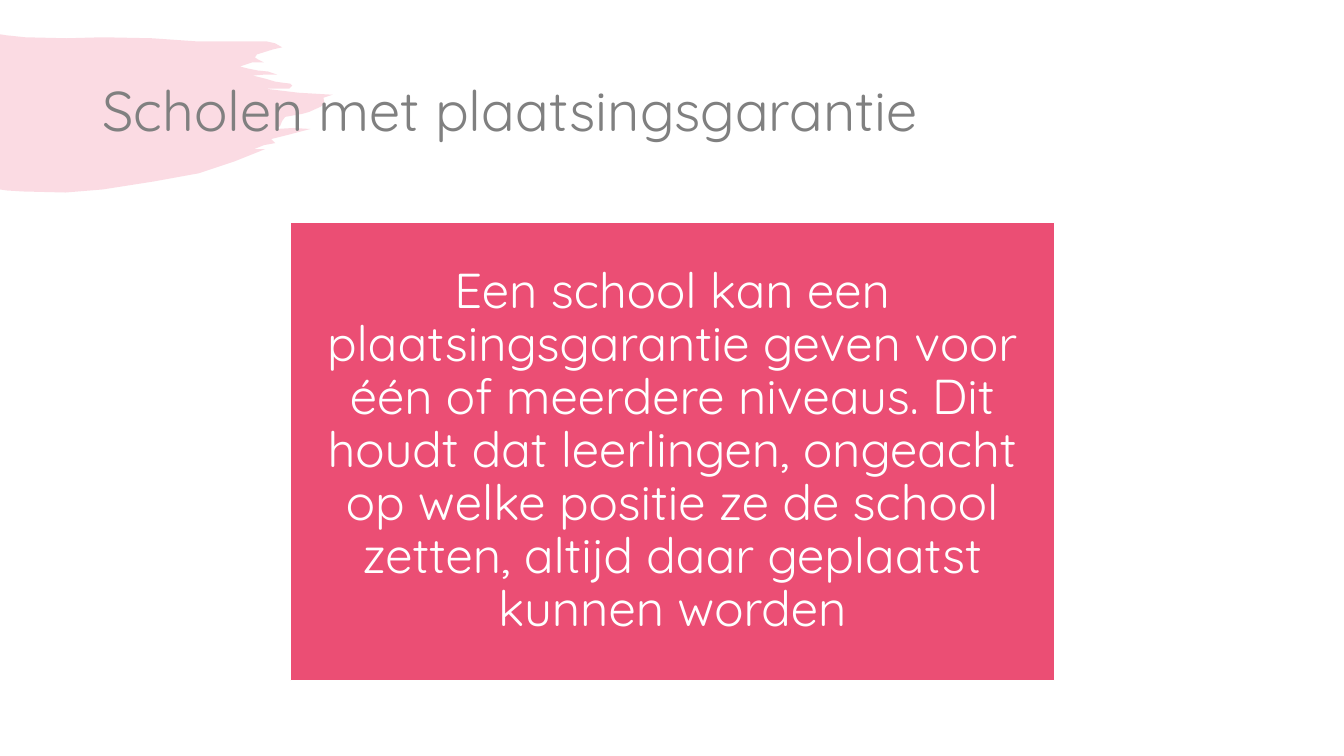
from pptx import Presentation
from pptx.dml.color import RGBColor
from pptx.enum.shapes import MSO_SHAPE
from pptx.enum.text import MSO_ANCHOR, MSO_AUTO_SIZE, PP_ALIGN
from pptx.util import Cm, Pt
from lxml import etree

PINK, GREY, WHITE = "EB4E74", "808080", "FFFFFF"


def paint(color_holder, value):
    color_holder.rgb = RGBColor.from_string(value)


def write(frame, text, size, color, align):
    frame.word_wrap = True
    frame.auto_size = MSO_AUTO_SIZE.NONE
    frame.vertical_anchor = MSO_ANCHOR.MIDDLE
    para = frame.paragraphs[0]
    para.alignment = align
    para.line_spacing = 0.9
    span = para.add_run()
    span.text = text
    span.font.name = "Quicksand"
    span.font.size = Pt(size)
    paint(span.font.color, color)


deck = Presentation()
deck.slide_width, deck.slide_height = Cm(33.87), Cm(19.05)
page = deck.slides.add_slide(deck.slide_layouts[5])
title = page.shapes.title

# Brush stroke, outlined in steps of 0.0254 cm
outline = [
    (0, 34), (6, 35), (25, 37), (66, 38), (102, 37), (151, 38), (194, 41),
    (248, 41), (264, 41), (273, 43), (280, 47), (271, 49), (255, 54),
    (253, 57), (256, 59), (262, 62), (250, 62), (238, 66), (246, 68),
    (256, 70), (266, 71), (275, 74), (263, 74), (251, 75), (263, 78),
    (273, 81), (280, 82), (288, 83), (290, 85), (287, 88), (284, 88),
    (263, 88), (296, 92), (330, 94), (321, 97), (322, 103), (318, 106),
    (307, 111), (300, 113), (283, 116), (280, 120), (278, 125), (274, 128),
    (291, 127), (308, 128), (289, 133), (269, 138), (273, 142), (262, 144),
    (252, 148), (263, 148), (233, 160), (197, 172), (153, 180), (102, 188),
    (65, 191), (23, 190), (7, 189), (0, 188),
]
builder = page.shapes.build_freeform(*outline[0], scale=Cm(0.0254))
builder.add_line_segments(outline[1:], close=True)
brush = builder.convert_to_shape()
brush.shadow.inherit = False
brush.fill.solid()
paint(brush.fill.fore_color, PINK)
brush.line.fill.background()
namespace = "{http://schemas.openxmlformats.org/drawingml/2006/main}"
brush_color = brush.element.spPr.find(f"{namespace}solidFill/{namespace}srgbClr")
etree.SubElement(brush_color, f"{namespace}alpha", val="20000")

# Title, brought in front of the brush stroke
brush.element.addnext(title.element)
title.left, title.top = Cm(2.33), Cm(1.01)
title.width, title.height = Cm(29.21), Cm(3.68)
write(title.text_frame, "Scholen met plaatsingsgarantie", 40, GREY, PP_ALIGN.LEFT)

# Explanation box
box = page.shapes.add_shape(
    MSO_SHAPE.RECTANGLE, Cm(7.32), Cm(5.6), Cm(19.25), Cm(11.55))
box.shadow.inherit = False
box.fill.solid()
paint(box.fill.fore_color, PINK)
paint(box.line.color, WHITE)
box.line.width = Pt(1)
frame = box.text_frame
frame.margin_left = frame.margin_right = Cm(0.38)
frame.margin_top = frame.margin_bottom = Cm(0.38)
write(
    frame,
    "Een school kan een plaatsingsgarantie geven voor één of meerdere niveaus. "
    "Dit houdt dat leerlingen, ongeacht op welke positie ze de school zetten, "
    "altijd daar geplaatst kunnen worden",
    35, WHITE, PP_ALIGN.CENTER)

deck.save("out.pptx")
